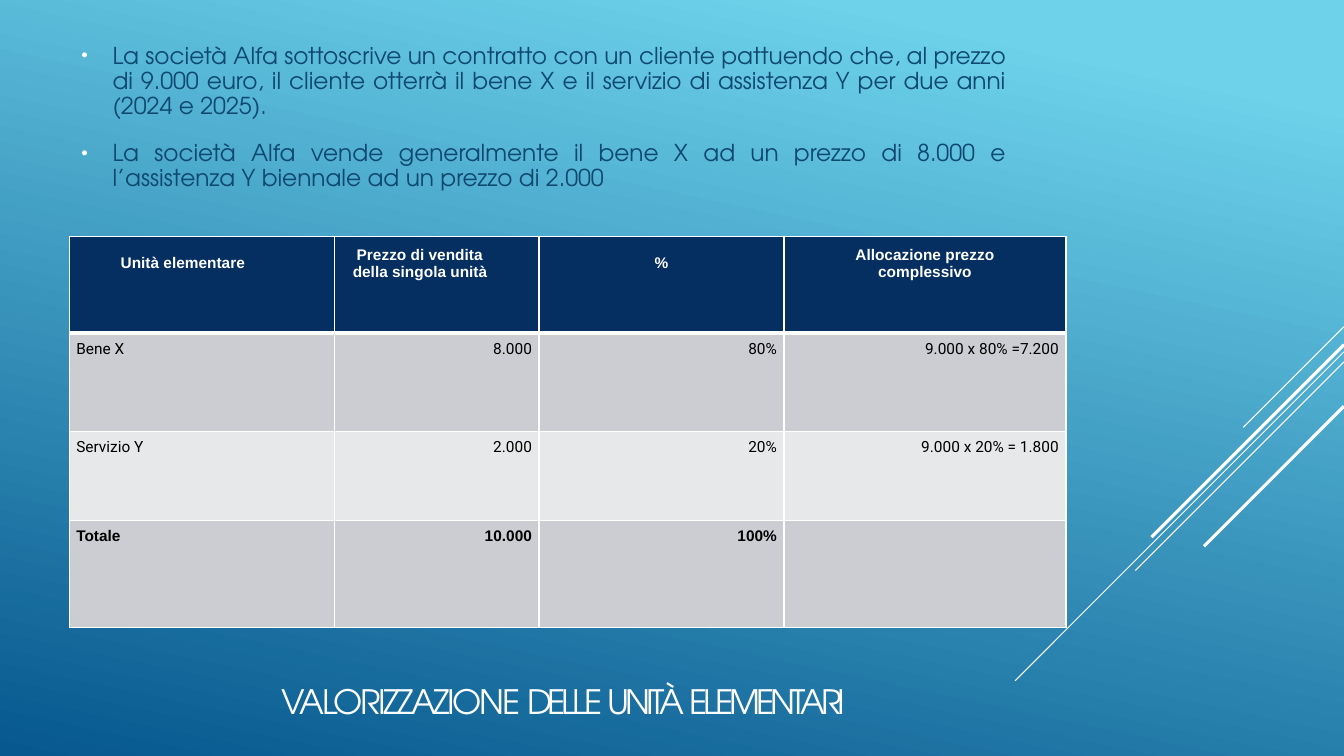
"""Build the slide that allocates a bundled price to its elementary units."""
from dataclasses import dataclass

from lxml.etree import SubElement
from pptx import Presentation
from pptx.dml.color import RGBColor
from pptx.enum.shapes import MSO_CONNECTOR
from pptx.enum.text import MSO_ANCHOR, MSO_AUTO_SIZE, PP_ALIGN
from pptx.oxml.ns import qn
from pptx.slide import Slide
from pptx.table import _Cell
from pptx.text.text import _Paragraph
from pptx.util import Pt

WHITE = RGBColor(0xFF, 0xFF, 0xFF)
BLACK = RGBColor(0x00, 0x00, 0x00)
SKY = RGBColor(0x6E, 0xD2, 0xEB)
OCEAN = RGBColor(0x06, 0x58, 0x8E)
NAVY = RGBColor(0x05, 0x2F, 0x61)
INK = RGBColor(0x0F, 0x49, 0x6F)
BAND_DARK = RGBColor(0xCC, 0xCD, 0xD2)
BAND_LIGHT = RGBColor(0xE7, 0xE8, 0xEA)
DISPLAY, HEADING, BODY = "TeX Gyre Adventor", "Arial", "Roboto"

SLIDE_WIDTH, SLIDE_HEIGHT = 960, 540
CONTENT_LEFT, CONTENT_WIDTH = 49.5, 712
CELL_PADDING = 5
COLUMN_WIDTHS = (189.5, 146, 175, 201.5)


@dataclass(frozen=True)
class Streak:
    """Diagonal line that falls from the right edge at 45 degrees."""
    top: float
    run: float
    weight: float


@dataclass(frozen=True)
class Heading:
    """Column heading with its lines, their indents and the space above."""
    lines: tuple[str, ...]
    top: float
    indents: tuple[float, ...] = ()


@dataclass(frozen=True)
class PriceRow:
    """Table row with its values, height and look."""
    values: tuple[str, ...]
    height: float
    band: RGBColor
    bold: bool = False


STREAKS = (
    Streak(233.3, 72, 0.75),
    Streak(251.3, 235, 0.75),
    Streak(258.5, 149, 0.75),
    Streak(246.2, 137.5, 2.25),
    Streak(290.2, 100, 2.25),
)
TITLE_WORDS = (
    ("VALORIZZAZIONE ", -1.7),
    ("DELLE ", -3),
    ("UNITÀ ", -2.7),
    ("ELEMENTARI", -2.8),
)
PREMISES = (
    "La società Alfa sottoscrive un contratto con un cliente pattuendo che, al prezzo di "
    "9.000 euro, il cliente otterrà il bene X e il servizio di assistenza Y per due anni "
    "(2024 e 2025).",
    "La società Alfa vende generalmente il bene X ad un prezzo di 8.000 e l’assistenza Y "
    "biennale ad un prezzo di 2.000",
)
HEADINGS = (
    Heading(("Unità elementare",), 13, (36.7,)),
    Heading(("Prezzo di vendita", "della singola unità"), 7.2, (15.8, 13)),
    Heading(("%",), 13),
    Heading(("Allocazione prezzo", "complessivo"), 7.2),
)
HEADING_HEIGHT = 69
PRICE_ROWS = (
    PriceRow(("Bene X", "8.000", "80%", "9.000 x 80% =7.200"), 70, BAND_DARK),
    PriceRow(("Servizio Y", "2.000", "20%", "9.000 x 20% = 1.800"), 64, BAND_LIGHT),
    PriceRow(("Totale", "10.000", "100%", ""), 76.5, BAND_DARK, bold=True),
)


def write(paragraph: _Paragraph, text: str, *, font: str, size: float, color: RGBColor,
          bold: bool = False, spacing: float = 0,
          align: PP_ALIGN = PP_ALIGN.LEFT) -> None:
    """Append a formatted run to the paragraph."""
    paragraph.alignment = align
    run = paragraph.add_run()
    run.text = text
    run.font.name = font
    run.font.size = Pt(size)
    run.font.bold = bold
    run.font.color.rgb = color
    if spacing:
        run.font._element.set("spc", str(round(spacing * 100)))


def paint_background(slide: Slide) -> None:
    """Fill the background with a gradient from light to dark blue."""
    fill = slide.background.fill
    fill.gradient()
    fill.gradient_angle = 258
    for stop, color, position in zip(fill.gradient_stops, (SKY, OCEAN), (0.1, 1)):
        stop.color.rgb = color
        stop.position = position


def draw_streak(slide: Slide, streak: Streak) -> None:
    """Draw one white diagonal."""
    line = slide.shapes.add_connector(
        MSO_CONNECTOR.STRAIGHT, Pt(SLIDE_WIDTH), Pt(streak.top),
        Pt(SLIDE_WIDTH - streak.run), Pt(streak.top + streak.run))
    line.line.color.rgb = WHITE
    line.line.width = Pt(streak.weight)
    SubElement(line._element.spPr, qn("a:effectLst"))


def add_title(slide: Slide) -> None:
    """Place the title at the foot of the slide."""
    title = slide.shapes.title
    title.left, title.top = Pt(43), Pt(477.5)
    title.width, title.height = Pt(718.5), Pt(41)
    title.text_frame.auto_size = MSO_AUTO_SIZE.NONE
    title.text_frame.vertical_anchor = MSO_ANCHOR.BOTTOM
    for word, spacing in TITLE_WORDS:
        write(title.text_frame.paragraphs[0], word, font=DISPLAY, size=24, color=WHITE,
              spacing=spacing, align=PP_ALIGN.CENTER)


def indent(paragraph: _Paragraph, left: float, first: float = 0) -> None:
    """Set the left margin and first-line indent."""
    properties = paragraph._p.get_or_add_pPr()
    properties.set("marL", str(Pt(left)))
    properties.set("indent", str(Pt(first)))


def add_bullet(paragraph: _Paragraph) -> None:
    """Give the paragraph a small white bullet."""
    properties = paragraph._p.get_or_add_pPr()
    bullet_color = SubElement(properties, qn("a:buClr"))
    SubElement(bullet_color, qn("a:srgbClr"), val=str(WHITE))
    SubElement(properties, qn("a:buSzPct"), val="80000")
    SubElement(properties, qn("a:buFont"), typeface=HEADING)
    SubElement(properties, qn("a:buChar"), char="•")


def add_premises(slide: Slide) -> None:
    """Write the bulleted premises above the table."""
    frame = slide.shapes.add_textbox(
        Pt(CONTENT_LEFT), Pt(28), Pt(CONTENT_WIDTH), Pt(117.5)).text_frame
    frame.word_wrap = True
    frame.margin_right = Pt(43.5)
    for index, premise in enumerate(PREMISES):
        paragraph = frame.add_paragraph() if index else frame.paragraphs[0]
        write(paragraph, premise, font=DISPLAY, size=16.6, color=INK, align=PP_ALIGN.JUSTIFY)
        paragraph.line_spacing = 0.9
        paragraph.space_before = Pt(9.9 if index else 1.1)
        paragraph.space_after = Pt(6)
        indent(paragraph, 23.8, -22.3)
        add_bullet(paragraph)


def style_cell(cell: _Cell, color: RGBColor, padding_top: float,
               top_border: float = 1, bottom_border: float = 1) -> None:
    """Set the margins, white borders and fill of a cell."""
    cell.margin_left = cell.margin_right = Pt(CELL_PADDING)
    cell.margin_top, cell.margin_bottom = Pt(padding_top), Pt(0)
    properties = cell._tc.get_or_add_tcPr()
    for side, weight in (("L", 1), ("R", 1), ("T", top_border), ("B", bottom_border)):
        border = SubElement(properties, qn(f"a:ln{side}"), w=str(Pt(weight)))
        SubElement(SubElement(border, qn("a:solidFill")), qn("a:srgbClr"), val=str(WHITE))
    cell.fill.solid()
    cell.fill.fore_color.rgb = color


def add_price_table(slide: Slide) -> None:
    """Build the table of unit prices and allocated amounts."""
    heights = (HEADING_HEIGHT, *(row.height for row in PRICE_ROWS))
    table = slide.shapes.add_table(
        len(heights), len(HEADINGS), Pt(CONTENT_LEFT), Pt(169),
        Pt(CONTENT_WIDTH), Pt(sum(heights))).table
    for column, width in zip(table.columns, COLUMN_WIDTHS):
        column.width = Pt(width)
    for table_row, height in zip(table.rows, heights):
        table_row.height = Pt(height)
    for column, heading in enumerate(HEADINGS):
        cell = table.cell(0, column)
        style_cell(cell, NAVY, heading.top, bottom_border=3)
        for index, line in enumerate(heading.lines):
            frame = cell.text_frame
            paragraph = frame.add_paragraph() if index else frame.paragraphs[0]
            write(paragraph, line, font=HEADING, size=11, color=WHITE, bold=True,
                  align=PP_ALIGN.LEFT if heading.indents else PP_ALIGN.CENTER)
            if heading.indents:
                indent(paragraph, heading.indents[index] - CELL_PADDING)
    for number, row in enumerate(PRICE_ROWS, start=1):
        for column, value in enumerate(row.values):
            cell = table.cell(number, column)
            style_cell(cell, row.band, 5, top_border=3 if number == 1 else 1)
            if value:
                write(cell.text_frame.paragraphs[0], value, size=11, color=BLACK,
                      font=HEADING if row.bold else BODY, bold=row.bold,
                      align=PP_ALIGN.RIGHT if column else PP_ALIGN.LEFT)


def main() -> None:
    """Assemble and save the slide."""
    deck = Presentation()
    deck.slide_width, deck.slide_height = Pt(SLIDE_WIDTH), Pt(SLIDE_HEIGHT)
    slide = deck.slides.add_slide(deck.slide_layouts[5])
    paint_background(slide)
    for streak in STREAKS:
        draw_streak(slide, streak)
    add_title(slide)
    add_price_table(slide)
    add_premises(slide)
    deck.save("out.pptx")


if __name__ == "__main__":
    main()
